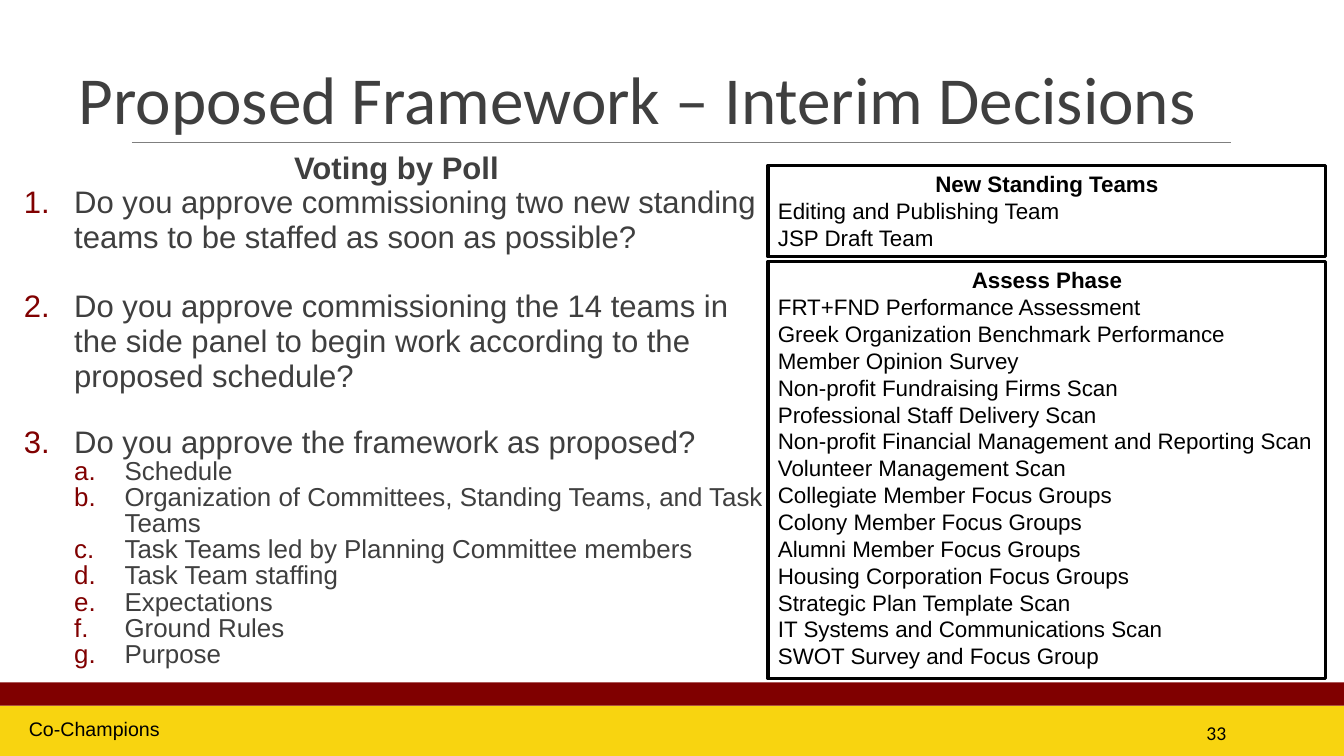
import pptx
import pptx.util
import pptx.dml.color
import pptx.enum.shapes
import pptx.enum.text
from lxml import etree
from pptx.oxml.ns import qn

Pt = pptx.util.Pt
ALIGN = pptx.enum.text.PP_ALIGN
ANCHOR = pptx.enum.text.MSO_ANCHOR
RECTANGLE = pptx.enum.shapes.MSO_SHAPE.RECTANGLE

COLORS = {
    "gold": "F8D410",
    "maroon": "800000",
    "rule": "7F7F7F",
    "body": "3F3F3F",
    "black": "000000",
}

QUESTIONS = [
    "Do you approve commissioning two new standing teams to be staffed as soon as possible?",
    "Do you approve commissioning the 14 teams in the side panel to begin work "
    "according to the proposed schedule?",
    "Do you approve the framework as proposed?",
]
FRAMEWORK_PARTS = [
    "Schedule",
    "Organization of Committees, Standing Teams, and Task Teams",
    "Task Teams led by Planning Committee members",
    "Task Team staffing",
    "Expectations",
    "Ground Rules",
    "Purpose",
]
STANDING_TEAMS = ["Editing and Publishing Team", "JSP Draft Team"]
ASSESS_TEAMS = [
    "FRT+FND Performance Assessment",
    "Greek Organization Benchmark Performance",
    "Member Opinion Survey",
    "Non-profit Fundraising Firms Scan",
    "Professional Staff Delivery Scan",
    "Non-profit Financial Management and Reporting Scan",
    "Volunteer Management Scan",
    "Collegiate Member Focus Groups",
    "Colony Member Focus Groups",
    "Alumni Member Focus Groups",
    "Housing Corporation Focus Groups",
    "Strategic Plan Template Scan",
    "IT Systems and Communications Scan",
    "SWOT Survey and Focus Group",
]


def rgb(name):
    return pptx.dml.color.RGBColor.from_string(COLORS[name])


def add_number(paragraph, scheme):
    """Number the paragraph automatically, in maroon."""
    properties = paragraph._p.get_or_add_pPr()
    color = etree.SubElement(properties, qn("a:buClr"))
    etree.SubElement(color, qn("a:srgbClr"), val=COLORS["maroon"])
    etree.SubElement(properties, qn("a:buFont"), typeface="+mj-lt")
    etree.SubElement(properties, qn("a:buAutoNum"), type=scheme)


def write(frame, text, size=16, font="Arial", color="black", bold=False, align=ALIGN.LEFT,
          line_spacing=1.0, before=0, level=0, margin=0, hanging=0, number=None):
    """Fill the frame's empty first paragraph, or append a new one."""
    paragraph = frame.paragraphs[0] if not frame.text else frame.add_paragraph()
    paragraph.level = level
    paragraph.alignment = align
    paragraph.line_spacing = line_spacing
    paragraph.space_before = Pt(before)
    paragraph.space_after = Pt(0)
    properties = paragraph._p.get_or_add_pPr()
    properties.set("marL", str(Pt(margin)))
    properties.set("indent", str(Pt(-hanging)))
    if number:
        add_number(paragraph, number)
    run = paragraph.add_run()
    run.text = text
    run.font.size = Pt(size)
    run.font.name = font
    run.font.bold = bold
    run.font.color.rgb = rgb(color)


def set_up_frame(frame, anchor=ANCHOR.TOP, side=7.2):
    frame.word_wrap = True
    frame.auto_size = pptx.enum.text.MSO_AUTO_SIZE.NONE
    frame.vertical_anchor = anchor
    frame.margin_left = frame.margin_right = Pt(side)
    frame.margin_top = frame.margin_bottom = Pt(3.6)
    return frame


def add_text_area(slide, left, top, width, height, **frame_format):
    box = slide.shapes.add_textbox(Pt(left), Pt(top), Pt(width), Pt(height))
    return set_up_frame(box.text_frame, **frame_format)


def add_rectangle(slide, left, top, width, height):
    rectangle = slide.shapes.add_shape(RECTANGLE, Pt(left), Pt(top), Pt(width), Pt(height))
    rectangle.shadow.inherit = False
    return rectangle


def add_band(slide, top, height, color):
    band = add_rectangle(slide, 0, top, 960, height)
    band.fill.solid()
    band.fill.fore_color.rgb = rgb(color)
    band.line.fill.background()


def add_title_rule(slide):
    rule = slide.shapes.add_connector(
        pptx.enum.shapes.MSO_CONNECTOR.STRAIGHT, Pt(94.3), Pt(101.5), Pt(879), Pt(101.5))
    rule.line.color.rgb = rgb("rule")
    rule.line.width = Pt(0.75)
    etree.SubElement(rule._element.spPr, qn("a:effectLst"))


def add_title(slide, text):
    title = slide.shapes.title
    title.left, title.top, title.width, title.height = Pt(49), Pt(23.8), Pt(826.5), Pt(78.5)
    frame = set_up_frame(title.text_frame, anchor=ANCHOR.BOTTOM)
    write(frame, text, size=48, font="Calibri", color="body", line_spacing=0.85)


def add_poll(slide):
    frame = add_text_area(slide, 8, 106.5, 541.5, 394, side=0)
    write(frame, "Voting by Poll", size=22.2, color="body", bold=True,
          align=ALIGN.CENTER, line_spacing=0.84, margin=9)
    for index, question in enumerate(QUESTIONS):
        is_last = index == len(QUESTIONS) - 1
        write(frame, question, size=22.2, color="body", line_spacing=0.84 if is_last else 0.94,
              before=24 if index else 0, margin=45, hanging=36, number="arabicPeriod")
    for part in FRAMEWORK_PARTS:
        write(frame, part, size=18.5, color="body", line_spacing=0.84, level=1,
              margin=81, hanging=36, number="alphaLcPeriod")


def add_team_panel(slide, top, height, heading, teams):
    panel = add_rectangle(slide, 548.6, top, 398.5, height)
    panel.fill.background()
    panel.line.color.rgb = rgb("black")
    panel.line.width = Pt(2.25)
    frame = set_up_frame(panel.text_frame)
    write(frame, heading, bold=True, align=ALIGN.CENTER)
    for team in teams:
        write(frame, team)


def main():
    deck = pptx.Presentation()
    deck.slide_width, deck.slide_height = Pt(960), Pt(540)
    slide = deck.slides.add_slide(deck.slide_layouts[5])

    add_band(slide, 504, 36, "gold")
    add_band(slide, 487.5, 16.5, "maroon")
    add_title_rule(slide)
    add_title(slide, "Proposed Framework – Interim Decisions")
    add_poll(slide)
    add_team_panel(slide, 186.7, 298, "Assess Phase", ASSESS_TEAMS)
    add_team_panel(slide, 118, 65.5, "New Standing Teams", STANDING_TEAMS)

    write(add_text_area(slide, 13.5, 508.5, 163.5, 24.5), "Co-Champions", size=14)
    page_number = add_text_area(slide, 780, 508.5, 103, 29, anchor=ANCHOR.MIDDLE)
    write(page_number, "33", size=14, font="Calibri", align=ALIGN.RIGHT)

    deck.save("out.pptx")


if __name__ == "__main__":
    main()
